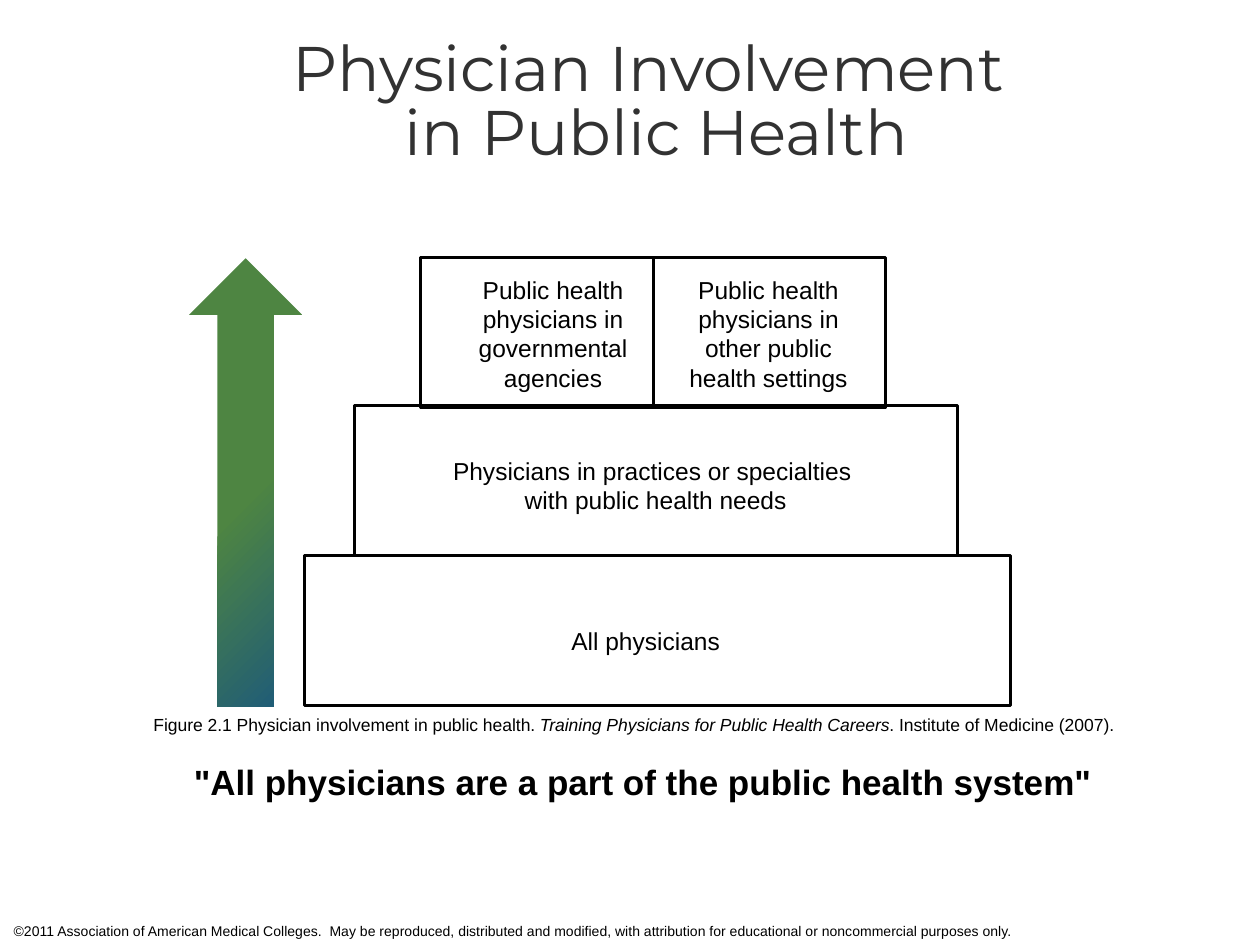
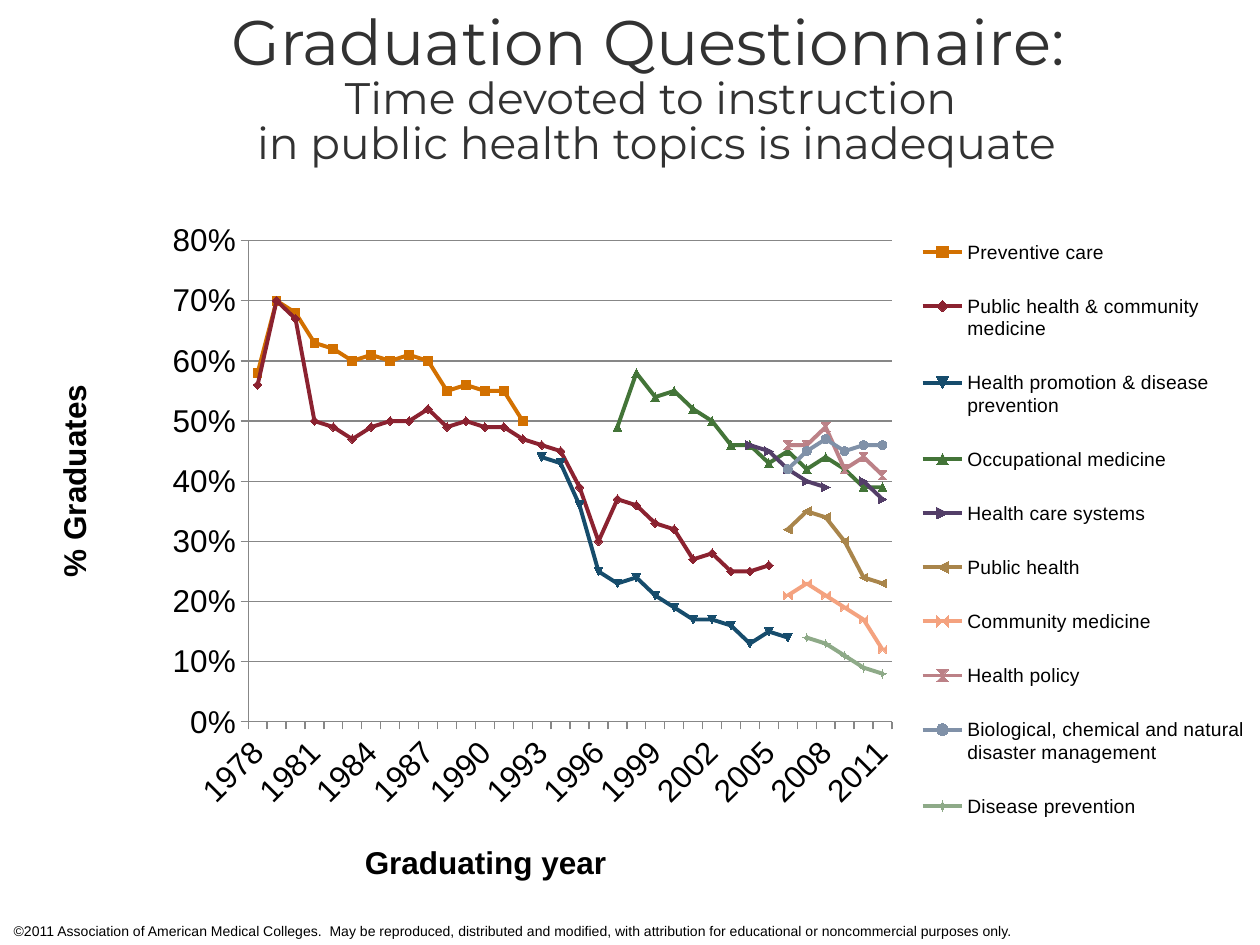
from lxml import etree
from pptx import Presentation
from pptx.chart.data import CategoryChartData
from pptx.dml.color import RGBColor
from pptx.enum.chart import XL_CHART_TYPE, XL_LEGEND_POSITION, XL_TICK_MARK
from pptx.enum.shapes import MSO_SHAPE
from pptx.enum.text import MSO_ANCHOR, PP_ALIGN
from pptx.oxml.ns import qn
from pptx.util import Inches, Pt

RECT, ARROW = MSO_SHAPE.RECTANGLE, MSO_SHAPE.UP_ARROW
LEFT, MID = PP_ALIGN.LEFT, PP_ALIGN.CENTER
TOP, BOTTOM = MSO_ANCHOR.TOP, MSO_ANCHOR.BOTTOM
LINES = XL_CHART_TYPE.LINE_MARKERS
CORNER = XL_LEGEND_POSITION.CORNER
OUT = XL_TICK_MARK.OUTSIDE

INK = {
    "black": "000000", "title": "323232", "grid": "878787",
    "blue": "1B587C", "green": "4E8542",
}
BODY, HEAD = "Arial", "Montserrat"
WIDE, HIGH = 9.65, 5.64


def write(slide, box, paras, align=MID, font=BODY, ink="black", pad=True,
          anchor=TOP, pitch=None):
    frame = slide.shapes.add_textbox(*map(Inches, box)).text_frame
    frame.word_wrap = True
    frame.vertical_anchor = anchor
    if not pad:
        frame.margin_left = frame.margin_right = 0
        frame.margin_top = frame.margin_bottom = 0
    for i, runs in enumerate(paras):
        para = frame.add_paragraph() if i else frame.paragraphs[0]
        para.alignment = align
        if pitch:
            para.line_spacing = pitch
        for text, size, style in runs:
            run = para.add_run()
            run.text = text.rstrip("\n")
            run.font.name = font
            run.font.size = Pt(size)
            run.font.bold = style == "bold"
            run.font.italic = style == "italic"
            run.font.color.rgb = RGBColor.from_string(INK[ink])
            if text.endswith("\n"):
                para.add_line_break()


def place(node, spot, x, y, w=None, h=None, inner=False):
    for old in node.findall(qn("c:layout")):
        node.remove(old)
    layout = etree.Element(qn("c:layout"))
    manual = etree.SubElement(layout, qn("c:manualLayout"))
    parts = {"layoutTarget": "inner"} if inner else {}
    parts.update(xMode="edge", yMode="edge", x=x / WIDE, y=y / HIGH)
    if w:
        parts.update(w=w / WIDE, h=h / HIGH)
    for key, val in parts.items():
        etree.SubElement(manual, qn(f"c:{key}")).set("val", str(val))
    node.insert(spot, layout)


deck = Presentation()
deck.slide_width, deck.slide_height = Inches(10), Inches(7.5)

titles = [
    [("Physician Involvement \n", 36, ""), ("in Public Health", 36, "")],
    [("Graduation Questionnaire: \n", 36, ""),
     ("Time devoted to instruction \n", 25.2, ""),
     ("in public health topics is inadequate", 25.2, "")],
]
notice = ("©2011 Association of American Medical Colleges.  May be reproduced, "
          "distributed and modified, with attribution for educational or "
          "noncommercial purposes only.")
slides = []
for title in titles:
    slide = deck.slides.add_slide(deck.slide_layouts[6])
    write(slide, (0.01, 7.27, 8.78, 0.24), [[(notice, 8, "")]], LEFT)
    write(slide, (0.62, 0.04, 9.18, 1.3), [title],
          font=HEAD, ink="title", pad=False, anchor=BOTTOM, pitch=0.85)
    slides.append(slide)

tiers, trend = slides

for left, top, width in [(3.34, 2.04, 1.85), (5.19, 2.04, 1.84),
                         (2.81, 3.22, 4.79), (2.42, 4.41, 5.6)]:
    block = tiers.shapes.add_shape(
        RECT, Inches(left), Inches(top), Inches(width), Inches(1.19))
    block.shadow.inherit = False
    block.fill.background()
    block.line.color.rgb = RGBColor.from_string(INK["black"])
    block.line.width = Pt(1.75)

labels = [
    ((3.66, 2.13, 1.46, 1.04),
     ["Public health physicians in governmental agencies"]),
    ((5.37, 2.13, 1.46, 1.04),
     ["Public health physicians in other public health settings"]),
    ((3.39, 3.57, 3.63, 0.57),
     ["Physicians in practices or specialties ", "with public health needs"]),
    ((3.31, 4.92, 3.63, 0.34), ["All physicians"]),
]
for box, rows in labels:
    write(tiers, box, [[(row, 14, "")] for row in rows])

arrow = tiers.shapes.add_shape(
    ARROW, Inches(1.5), Inches(2.05), Inches(0.9), Inches(3.56))
arrow.shadow.inherit = False
arrow.line.fill.background()
arrow.fill.gradient()
for stop, name, pos in zip(arrow.fill.gradient_stops, ("blue", "green"), (0, 0.47)):
    stop.color.rgb = RGBColor.from_string(INK[name])
    stop.position = pos
grad = arrow.element.spPr.find(qn("a:gradFill"))
grad.remove(grad.find(qn("a:lin")))
glow = etree.SubElement(grad, qn("a:path"))
glow.set("path", "circle")
focus = etree.SubElement(glow, qn("a:fillToRect"))
focus.set("l", "100000")
focus.set("t", "100000")

write(tiers, (0.93, 5.62, 8.2, 0.27), [[
    ("Figure 2.1 Physician involvement in public health. ", 10, ""),
    ("Training Physicians for Public Health Careers", 10, "italic"),
    (". Institute of Medicine (2007).", 10, ""),
]])
write(tiers, (1.44, 5.99, 8.44, 0.44),
      [[('"All physicians are a part of the public health system"', 20, "bold")]],
      LEFT)

first, last = 1978, 2011
years = range(first, last + 1)
topics = [
    ("Preventive care", "D27000", 1978,
     [58, 70, 68, 63, 62, 60, 61, 60, 61, 60, 55, 56, 55, 55, 50]),
    ("Public health & community medicine", "8B2230", 1978,
     [56, 70, 67, 50, 49, 47, 49, 50, 50, 52, 49, 50, 49, 49, 47, 46, 45, 39,
      30, 37, 36, 33, 32, 27, 28, 25, 25, 26]),
    ("Health promotion & disease prevention", "164C6C", 1993,
     [44, 43, 36, 25, 23, 24, 21, 19, 17, 17, 16, 13, 15, 14]),
    ("Occupational medicine", "437438", 1997,
     [49, 58, 54, 55, 52, 50, 46, 46, 43, 45, 42, 44, 42, 39, 39]),
    ("Health care systems", "533E68", 2004, [46, 45, 42, 40, 39, None, 40, 37]),
    ("Public health", "A9854B", 2006, [32, 35, 34, 30, 24, 23]),
    ("Community medicine", "F4A27F", 2006, [21, 23, 21, 19, 17, 12]),
    ("Health policy", "BC8187", 2006, [46, 46, 49, 42, 44, 41]),
    ("Biological, chemical and natural disaster management", "8091A8", 2006,
     [42, 45, 47, 45, 46, 46]),
    ("Disease prevention", "8EAA88", 2007, [14, 13, 11, 9, 8]),
]
data = CategoryChartData(number_format="0%")
data.categories = years
for name, tint, start, marks in topics:
    found = dict(enumerate(marks, start))
    shares = [found.get(year) for year in years]
    data.add_series(name, [None if v is None else v / 100 for v in shares])

chart = trend.shapes.add_chart(
    LINES, Inches(0.36), Inches(1.53), Inches(WIDE), Inches(HIGH), data).chart
chart.has_title = False
chart.font.name = BODY
chart.font.size = Pt(18)
chart.font.color.rgb = RGBColor.from_string(INK["black"])
plot = chart.plots[0]
plot.vary_by_categories = False
for line, (name, tint, start, marks) in zip(plot.series, topics):
    shade = RGBColor.from_string(tint)
    line.smooth = False
    line.format.line.width = Pt(2.25)
    line.format.line.color.rgb = shade
    line.marker.format.fill.solid()
    line.marker.format.fill.fore_color.rgb = shade
    line.marker.format.line.color.rgb = shade

across, up = chart.category_axis, chart.value_axis
for axis, text, x, y in [(across, "Graduating year", 2.49, 5.11),
                         (up, "% Graduates", 0.02, 1.48)]:
    axis.major_tick_mark = OUT
    axis.format.line.color.rgb = RGBColor.from_string(INK["grid"])
    axis.tick_labels.font.size = Pt(18)
    run = axis.axis_title.text_frame.paragraphs[0].add_run()
    run.text = text
    run.font.name = BODY
    run.font.size = Pt(18)
    run.font.bold = True
    run.font.color.rgb = RGBColor.from_string(INK["black"])
    place(axis.axis_title._element, 1, x, y)
up.axis_title.text_frame._txBody.bodyPr.set("rot", "-5400000")
up.minimum_scale, up.maximum_scale, up.major_unit = 0, 0.8, 0.1
up.tick_labels.number_format = "0%"
up.tick_labels.number_format_is_linked = False
up.has_major_gridlines = True
up.major_gridlines.format.line.color.rgb = RGBColor.from_string(INK["grid"])

across.tick_labels.number_format = "General"
across.tick_labels.number_format_is_linked = False
node = across._element
node.find(qn("c:txPr")).find(qn("a:bodyPr")).set("rot", "-2700000")
tail = node.find(qn("c:noMultiLvlLbl"))
for tag, step in (("c:tickLblSkip", 3), ("c:tickMarkSkip", 1)):
    skip = etree.Element(qn(tag))
    skip.set("val", str(step))
    tail.addprevious(skip)

chart.has_legend = True
key = chart.legend
key.position = CORNER
key.include_in_layout = False
key.font.size = Pt(11)
key.font.name = BODY
place(key._element, 1, 6.89, 0.13, 2.7, 5.08)
area = chart._chartSpace.chart.plotArea
place(area, 0, 1.61, 0.38, 5.11, 3.82, inner=True)

deck.save("out.pptx")
